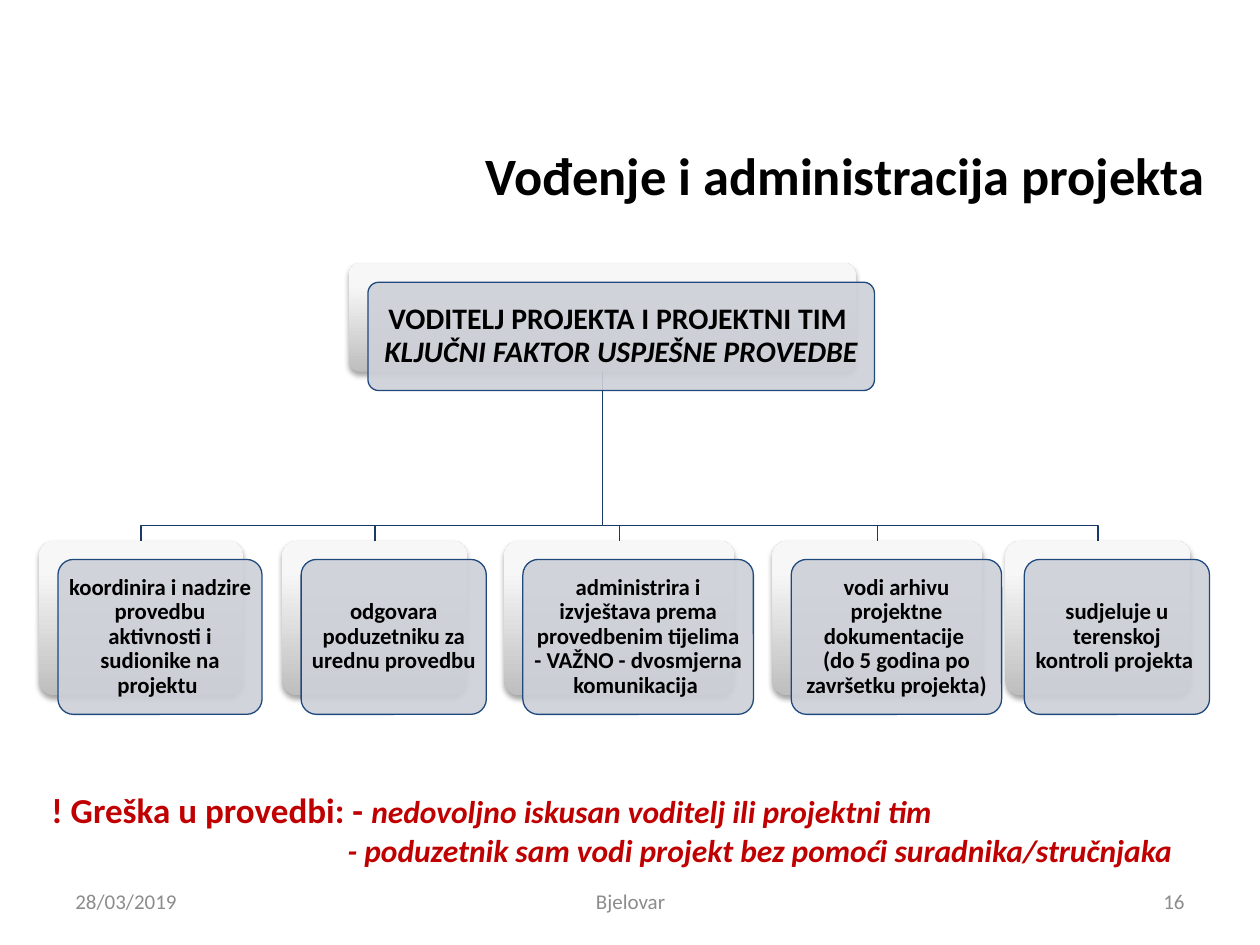
import pptx
import pptx.util
import pptx.dml.color
import pptx.enum.shapes
import pptx.enum.text
import pptx.oxml
import pptx.oxml.ns

Inches = pptx.util.Inches
Pt = pptx.util.Pt
ALIGN = pptx.enum.text.PP_ALIGN
MIDDLE = pptx.enum.text.MSO_ANCHOR.MIDDLE
ROUNDED = pptx.enum.shapes.MSO_SHAPE.ROUNDED_RECTANGLE
NAMESPACE = pptx.oxml.ns.nsdecls("a")
SHADOW = (f'<a:effectLst {NAMESPACE}><a:outerShdw blurRad="39400" dist="22900" dir="5400000" '
          'rotWithShape="0"><a:srgbClr val="000000"><a:alpha val="35000"/></a:srgbClr>'
          '</a:outerShdw></a:effectLst>')


def color(value):
    return pptx.dml.color.RGBColor.from_string(value)


def add_span(para, text, size, value="000000", bold=True, italic=False):
    span = para.add_run()
    span.text = text
    span.font.name = "Calibri"
    span.font.size = Pt(size)
    span.font.bold = bold
    span.font.italic = italic
    span.font.color.rgb = color(value)


deck = pptx.Presentation()
deck.slide_width, deck.slide_height = Inches(10), Inches(7.5)
page = deck.slides.add_slide(deck.slide_layouts[5])

# Title
title = page.shapes.title
title.left, title.top, title.width, title.height = [Inches(v) for v in (0.76, 0.76, 9, 1.25)]
title.text_frame.vertical_anchor = MIDDLE
para = title.text_frame.paragraphs[0]
para.alignment = ALIGN.RIGHT
add_span(para, "Vođenje i administracija projekta ", 30)

# Cards: left, top, width, height, text size, inset, lines
root = (2.77, 2.09, 4.02, 0.86, 17, 0.07,
        ["VODITELJ PROJEKTA I PROJEKTNI TIM ", "KLJUČNI FAKTOR USPJEŠNE PROVEDBE"])
duties = [
    (0.31, 1.62, ["koordinira i nadzire provedbu aktivnosti i sudionike na projektu "]),
    (2.24, 1.47, ["odgovara poduzetniku za urednu provedbu"]),
    (4.00, 1.83, ["administrira i izvještava prema provedbenim tijelima "
                  "- VAŽNO - dvosmjerna komunikacija "]),
    (6.13, 1.67, ["vodi arhivu projektne dokumentacije ", "(do 5 godina po završetku projekta)"]),
    (7.98, 1.47, ["sudjeluje u terenskoj kontroli projekta "]),
]
duty_top, branch_y = 4.29, 4.17
cards = [root] + [(left, duty_top, width, 1.23, 13, 0.05, lines) for left, width, lines in duties]

# Branches from the root card to each duty
root_x, root_bottom = root[0] + root[2] / 2, root[1] + root[3]
for left, width, lines in reversed(duties):
    center = left + width / 2
    builder = page.shapes.build_freeform(Inches(root_x), Inches(root_bottom))
    builder.add_line_segments([(Inches(x), Inches(y)) for x, y in (
        (root_x, branch_y), (center, branch_y), (center, duty_top))], close=False)
    branch = builder.convert_to_shape()
    branch.shadow.inherit = False
    branch.fill.background()
    branch.line.color.rgb = color("193A64")
    branch.line.width = Pt(0.75)

# Each card is a grey plate with a translucent text panel in front
offset = 0.15
for left, top, width, height, size, inset, lines in cards:
    plate = page.shapes.add_shape(ROUNDED, Inches(left), Inches(top), Inches(width), Inches(height))
    plate.adjustments[0] = 0.1
    plate.line.fill.background()
    plate.fill.gradient()
    plate.fill.gradient_angle = 90
    for stop, position, value in zip(plate.fill.gradient_stops, (0, 0.8), ("BEBEBE", "F7F7F7")):
        stop.position = position
        stop.color.rgb = color(value)
    plate.element.spPr.append(pptx.oxml.parse_xml(SHADOW))

    panel = page.shapes.add_shape(ROUNDED, Inches(left + offset), Inches(top + offset),
                                  Inches(width), Inches(height))
    panel.adjustments[0] = 0.1
    panel.shadow.inherit = False
    panel.fill.solid()
    panel.fill.fore_color.rgb = color("CDD0D7")
    fill_color = panel.element.spPr.find(".//" + pptx.oxml.ns.qn("a:srgbClr"))
    fill_color.append(pptx.oxml.parse_xml(f'<a:alpha {NAMESPACE} val="90000"/>'))
    panel.line.color.rgb = color("1F497D")
    panel.line.width = Pt(0.75)
    frame = panel.text_frame
    frame.word_wrap = True
    frame.vertical_anchor = MIDDLE
    frame.margin_left = frame.margin_right = Inches(inset)
    frame.margin_top = frame.margin_bottom = Inches(inset)
    para = frame.paragraphs[0]
    para.alignment = ALIGN.CENTER
    para.line_spacing = 0.9
    for index, line in enumerate(lines):
        if index:
            para.add_line_break()
        add_span(para, line, size, italic=size == 17 and index == 1)

# Warning, with the second line indented under the first reason
box = page.shapes.add_textbox(Inches(0.18), Inches(6.21), Inches(9.85), Inches(0.74))
box.text_frame.word_wrap = True
warning = [
    (0.13, [("! Greška u provedbi: - ", 20, False),
            ("nedovoljno iskusan voditelj ili projektni tim", 18, True)]),
    (2.48, [("- poduzetnik sam vodi projekt bez pomoći suradnika/stručnjaka", 18, True)]),
]
for index, (indent, spans) in enumerate(warning):
    para = box.text_frame.add_paragraph() if index else box.text_frame.paragraphs[0]
    para._p.get_or_add_pPr().set("marL", str(Inches(indent)))
    for text, size, italic in spans:
        add_span(para, text, size, "C00000", italic=italic)

# Footer
for left, width, text, alignment in (
        (0.5, 2.33, "28/03/2019", ALIGN.LEFT),
        (3.42, 3.17, "Bjelovar", ALIGN.CENTER),
        (7.17, 2.33, "16", ALIGN.RIGHT)):
    box = page.shapes.add_textbox(Inches(left), Inches(6.95), Inches(width), Inches(0.4))
    box.text_frame.word_wrap = True
    box.text_frame.vertical_anchor = MIDDLE
    para = box.text_frame.paragraphs[0]
    para.alignment = alignment
    add_span(para, text, 12, "8C8C8C", bold=False)

deck.save("out.pptx")
